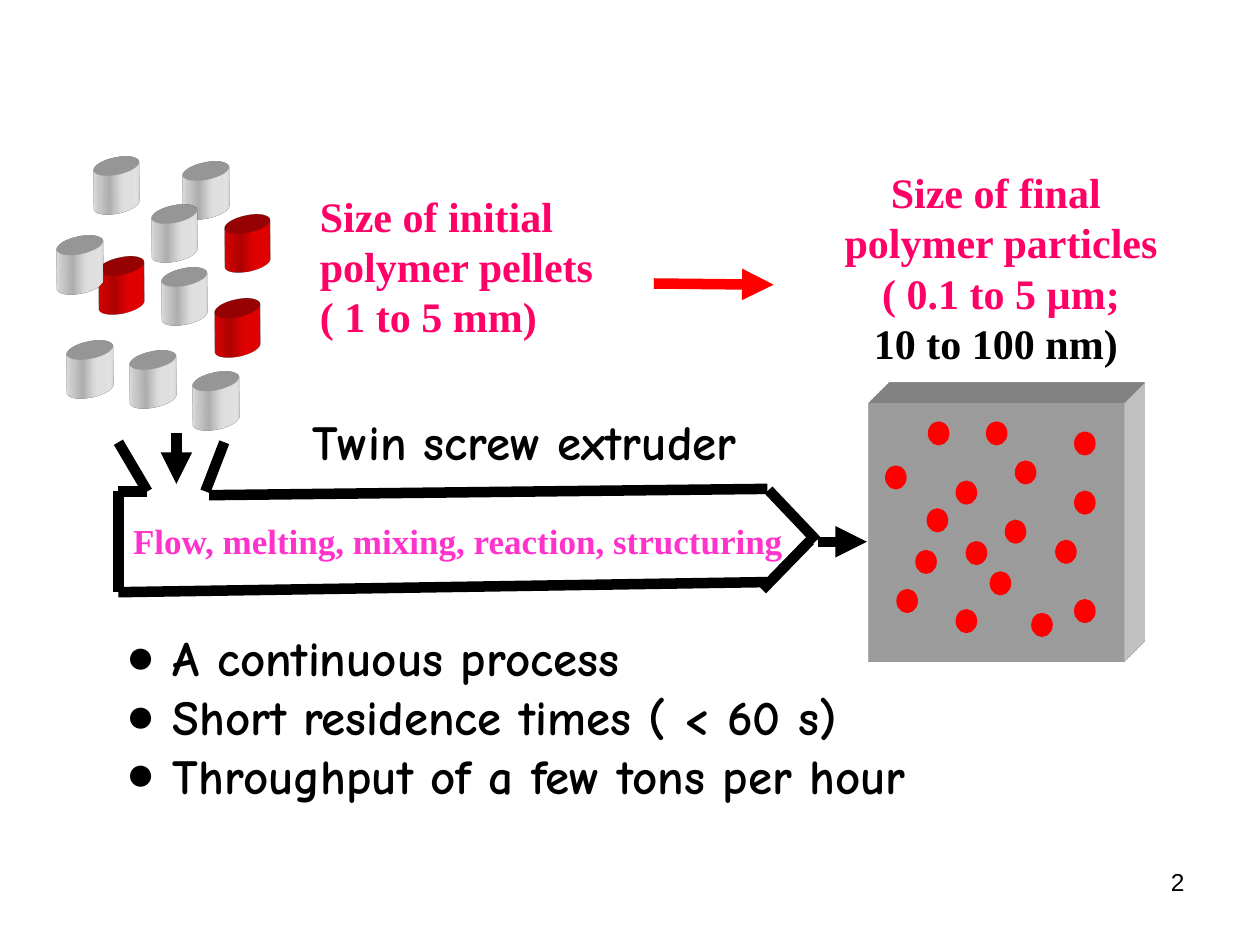
import pptx
import pptx.dml.color
import pptx.enum.shapes
import pptx.enum.text
import pptx.oxml
import pptx.oxml.ns
import pptx.util
from pptx.util import Inches

SHAPES = pptx.enum.shapes.MSO_SHAPE
ALIGN = pptx.enum.text.PP_ALIGN
HEADING = {"size": pptx.util.Pt(24), "name": "Times New Roman", "bold": True}
COMIC = {"size": pptx.util.Pt(28), "name": "Comic Neue", "bold": True}
RED, PINK, BLACK, WHITE = "FF0000", "FF0066", "000000", "FFFFFF"

# Places relative to the region that holds them
RED_PELLETS = [(1.25, 1.13), (0.33, 0.79), (1.33, 0.46)]
WHITE_PELLETS = [(1.0, 0.04), (0.75, 0.38), (0.83, 0.88), (0, 0.63), (0.08, 1.46),
                 (1.08, 1.71), (0.58, 1.54), (0.29, 0)]
PARTICLES = [(0.15, 0.51), (0.49, 0.16), (1.18, 0.47), (0.71, 0.63), (0.39, 1.18),
             (1.65, 0.24), (1.5, 1.1), (1.65, 0.71), (0.24, 1.49), (0.48, 0.85),
             (1.65, 1.57), (1.1, 0.94), (0.98, 1.35), (0.71, 1.65), (1.31, 1.68),
             (0.95, 0.16), (0.79, 1.11)]
EXTRUDER_WALLS = [(0, 0.07, 0.23, 0.46), (0.84, 0.07, 0.69, 0.46),
                  (0.72, 0.49, 5.15, 0.44), (0.23, 0.46, 0, 0.46),
                  (0, 0.46, 0, 1.26), (0, 1.26, 5.15, 1.18),
                  (5.16, 0.45, 5.54, 0.85), (5.11, 1.24, 5.49, 0.85)]
EXTRUDER_ARROWS = [(0.46, 0, 0.46, 0.4), (5.55, 0.86, 5.94, 0.86)]


def rgb(value):
    return pptx.dml.color.RGBColor.from_string(value)


def add_child(parent, tag, **attributes):
    child = parent.makeelement(pptx.oxml.ns.qn(tag), attributes)
    parent.append(child)
    return child


def add_preset(slide, kind, left, top, width, height, color):
    shape = slide.shapes.add_shape(
        kind, Inches(left), Inches(top), Inches(width), Inches(height))
    shape.shadow.inherit = False
    shape.fill.solid()
    shape.fill.fore_color.rgb = rgb(color)
    shape.line.fill.background()
    return shape


def extrude(shape, depth, color, tilt=0):
    """Give the shape depth; tilt is the turn about the level axis in degrees."""
    properties = shape._element.spPr
    scene = add_child(properties, "a:scene3d")
    camera = add_child(scene, "a:camera", prst="legacyObliqueTopRight")
    if tilt:
        add_child(camera, "a:rot", lat=str(tilt * 60000), lon="0", rev="0")
    add_child(scene, "a:lightRig", rig="legacyFlat3", dir="b")
    solid = add_child(properties, "a:sp3d", extrusionH=str(Inches(depth)),
                      prstMaterial="legacyMatte")
    for bevel in ("a:bevelT", "a:bevelB"):
        add_child(solid, bevel, w="13500", h="13500", prst="angle")
    add_child(add_child(solid, "a:extrusionClr"), "a:srgbClr", val=color)


def add_line(slide, left, top, segment, color=BLACK, arrow=False):
    x1, y1, x2, y2 = segment
    connector = slide.shapes.add_connector(
        pptx.enum.shapes.MSO_CONNECTOR.STRAIGHT, Inches(left + x1),
        Inches(top + y1), Inches(left + x2), Inches(top + y2))
    connector.line.width = pptx.util.Pt(6)
    connector.line.color.rgb = rgb(color)
    if arrow:
        add_child(connector.line._get_or_add_ln(), "a:tailEnd", type="triangle")
    add_child(connector._element.spPr, "a:effectLst")


def add_text(slide, box, lines, font, align, bullet=None, fit=True):
    """Each line is a pair of text and colour."""
    shape = slide.shapes.add_textbox(*map(Inches, box))
    frame = shape.text_frame
    frame.word_wrap = not fit
    if fit:
        frame.auto_size = pptx.enum.text.MSO_AUTO_SIZE.SHAPE_TO_FIT_TEXT
    for index, (text, color) in enumerate(lines):
        paragraph = frame.add_paragraph() if index else frame.paragraphs[0]
        paragraph.alignment = align
        run = paragraph.add_run()
        run.text = text
        for name, value in font.items():
            setattr(run.font, name, value)
        run.font.color.rgb = rgb(color)
        if bullet:
            properties = paragraph._p.get_or_add_pPr()
            add_child(properties, "a:buFont", typeface="Times New Roman")
            add_child(properties, "a:buChar", char=bullet)


def add_pellets(slide, left, top):
    for places, color in ((RED_PELLETS, RED), (WHITE_PELLETS, WHITE)):
        for x, y in places:
            pellet = add_preset(slide, SHAPES.OVAL, left + x, top + y, 0.33, 0.42, color)
            extrude(pellet, 0.31, color, tilt=271)


def add_extruder(slide, left, top):
    for wall in EXTRUDER_WALLS:
        add_line(slide, left, top, wall)
    for arrow in EXTRUDER_ARROWS:
        add_line(slide, left, top, arrow, arrow=True)
    add_text(slide, (left, top + 0.63, 5.39, 0.44),
             [("Flow, melting, mixing, reaction, structuring", "FF33CC")],
             {**HEADING, "size": pptx.util.Pt(20)}, ALIGN.CENTER)
    add_text(slide, (left + 1.15, top - 0.22, 4.14, 0.57),
             [("Twin screw extruder", BLACK)], COMIC, ALIGN.CENTER)


def add_block(slide, left, top, width, height):
    block = add_preset(slide, SHAPES.RECTANGLE, left, top, width, height, "DDDDDD")
    extrude(block, 0.47, "DDDDDD")
    for x, y in PARTICLES:
        particle = add_preset(slide, SHAPES.OVAL, left + x, top + y, 0.14, 0.16, RED)
        particle.line.color.rgb = rgb(RED)
        particle.line.width = pptx.util.Pt(2.25)


def add_sizes(slide, left, top):
    add_text(slide, (left, top + 0.19, 2.39, 1.31),
             [(text, PINK) for text in
              ("Size of initial ", "polymer pellets", "( 1 to 5 mm) ")],
             HEADING, ALIGN.JUSTIFY)
    add_line(slide, left, top, (2.75, 0.98, 3.7, 0.99), RED, arrow=True)
    add_text(slide, (left + 4.15, top, 2.71, 1.72),
             [("Size of final ", PINK), ("polymer particles", PINK),
              ("( 0.1 to 5 µm;", PINK), ("10 to 100 nm) ", BLACK)],
             HEADING, ALIGN.CENTER)


def main():
    presentation = pptx.Presentation()
    presentation.slide_width, presentation.slide_height = Inches(10), Inches(7.5)
    slide = presentation.slides.add_slide(presentation.slide_layouts[6])
    # Slide number
    add_text(slide, (7.17, 6.83, 2.33, 0.52), [("2", BLACK)],
             {"size": pptx.util.Pt(14), "name": "Arial"}, ALIGN.RIGHT, fit=False)
    # Process, from pellets to particles
    add_extruder(slide, 0.94, 3.44)
    add_pellets(slide, 0.47, 1.11)
    add_sizes(slide, 2.44, 1.27)
    add_block(slide, 6.89, 3.2, 2.03, 2.05)
    # Process features
    add_text(slide, (0.9, 4.93, 7.73, 1.52),
             [(text, BLACK) for text in
              (" A continuous process", " Short residence times ( < 60 s)",
               " Throughput of a few tons per hour")],
             COMIC, ALIGN.LEFT, bullet="●")
    presentation.save("out.pptx")


if __name__ == "__main__":
    main()
